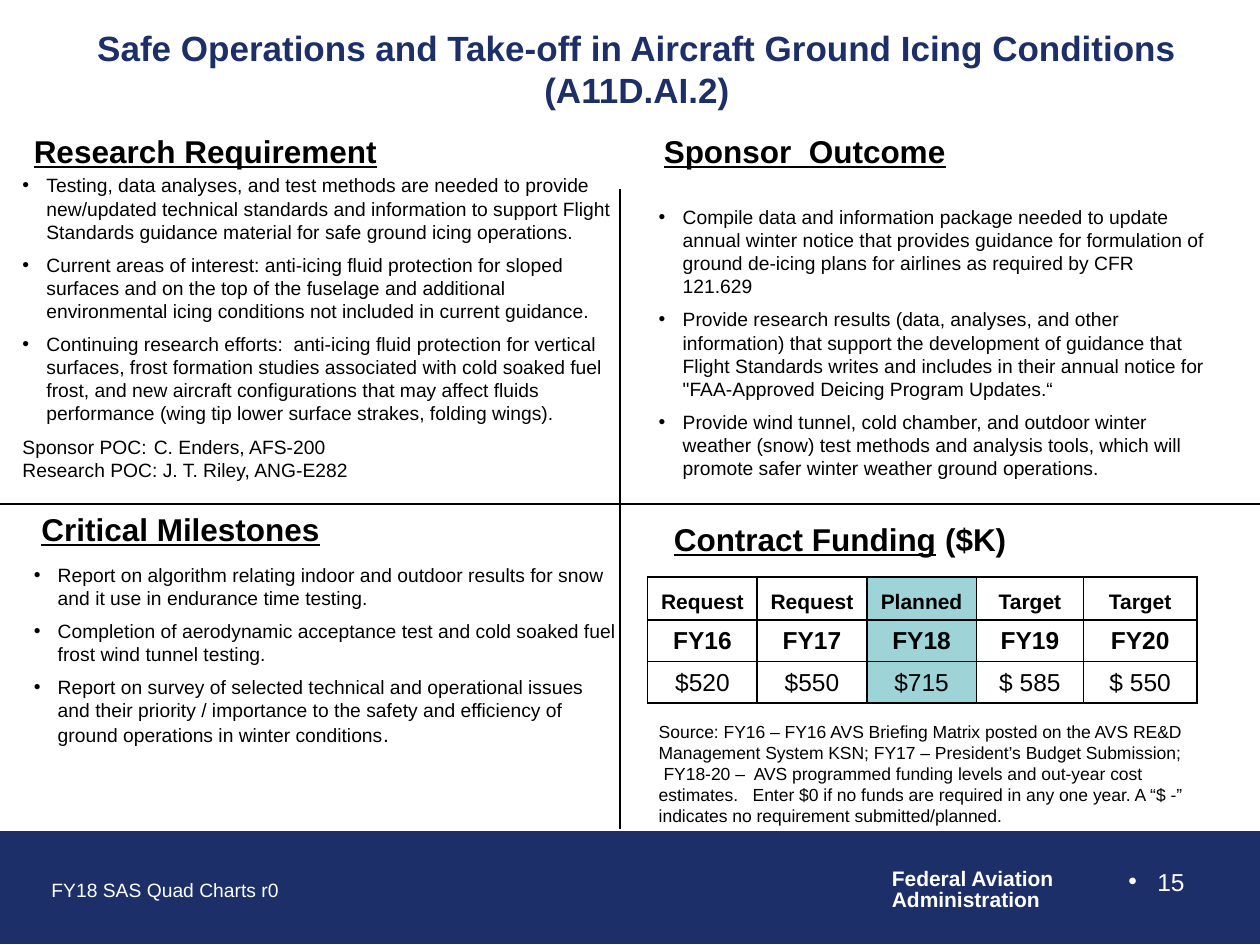
from dataclasses import dataclass

import pptx
import pptx.dml.color
import pptx.enum.shapes
import pptx.enum.text
import pptx.oxml.ns
import pptx.util
from lxml import etree

Inches, Pt = pptx.util.Inches, pptx.util.Pt
RGBColor = pptx.dml.color.RGBColor
Align = pptx.enum.text.PP_ALIGN
Anchor = pptx.enum.text.MSO_ANCHOR
qn = pptx.oxml.ns.qn

NAVY = RGBColor(0x1D, 0x2F, 0x68)
BLACK = RGBColor(0, 0, 0)
WHITE = RGBColor(0xFF, 0xFF, 0xFF)
TEAL = RGBColor(0x9E, 0xD3, 0xD7)
FONT = "Arial"


@dataclass
class Span:
    text: str
    size: float = 11
    bold: bool = False
    underline: bool = False
    color: RGBColor = BLACK


@dataclass
class Para:
    spans: list[Span]
    bullet_indent: float = 0
    space_before: float = 0
    line_spacing: float = 1
    align: Align = Align.LEFT


@dataclass
class TextBlock:
    left: float
    top: float
    width: float
    height: float
    paras: list[Para]
    wrap: bool = True
    anchor: Anchor = Anchor.TOP


def write_para(para, content: Para) -> None:
    para.alignment = content.align
    para.space_before = Pt(content.space_before)
    para.line_spacing = content.line_spacing
    if content.bullet_indent:
        properties = para._p.get_or_add_pPr()
        indent = Inches(content.bullet_indent)
        properties.set("marL", str(indent))
        properties.set("indent", str(-indent))
        etree.SubElement(properties, qn("a:buFont"), typeface=FONT)
        etree.SubElement(properties, qn("a:buChar"), char="•")
    for span in content.spans:
        run = para.add_run()
        run.text = span.text
        run.font.name = FONT
        run.font.size = Pt(span.size)
        run.font.bold = span.bold
        run.font.underline = span.underline
        run.font.color.rgb = span.color


def draw_text(page, block: TextBlock) -> None:
    box = page.shapes.add_textbox(Inches(block.left), Inches(block.top),
                                  Inches(block.width), Inches(block.height))
    frame = box.text_frame
    frame.word_wrap = block.wrap
    frame.vertical_anchor = block.anchor
    for index, content in enumerate(block.paras):
        para = frame.add_paragraph() if index else frame.paragraphs[0]
        write_para(para, content)


def draw_line(page, x1: float, y1: float, x2: float, y2: float) -> None:
    line = page.shapes.add_connector(pptx.enum.shapes.MSO_CONNECTOR.STRAIGHT,
                                     Inches(x1), Inches(y1), Inches(x2), Inches(y2))
    line.line.color.rgb = BLACK
    line.line.width = Pt(0.75)
    etree.SubElement(line._element.spPr, qn("a:effectLst"))


def border_cell(cell) -> None:
    properties = cell._tc.get_or_add_tcPr()
    for position, side in enumerate(("lnL", "lnR", "lnT", "lnB")):
        edge = etree.Element(qn(f"a:{side}"), w=str(Pt(1)))
        fill = etree.SubElement(edge, qn("a:solidFill"))
        etree.SubElement(fill, qn("a:srgbClr"), val=str(BLACK))
        properties.insert(position, edge)


def draw_funding_table(page) -> None:
    widths = [0.87, 0.87, 0.87, 0.85, 0.9]
    heights = [0.34, 0.33, 0.33]
    rows = [["Request", "Request", "Planned", "Target", "Target"],
            ["FY16", "FY17", "FY18", "FY19", "FY20"],
            ["$520", "$550", "$715", "$ 585", "$ 550"]]
    fills = {2: TEAL, 4: WHITE}
    table = page.shapes.add_table(len(rows), len(widths), Inches(5.14), Inches(4.58),
                                  Inches(sum(widths)), Inches(sum(heights))).table
    table.first_row = table.horz_banding = False
    for column, width in zip(table.columns, widths):
        column.width = Inches(width)
    for row, height in zip(table.rows, heights):
        row.height = Inches(height)
    for r, texts in enumerate(rows):
        for c, text in enumerate(texts):
            cell = table.cell(r, c)
            cell.vertical_anchor = Anchor.BOTTOM
            if c in fills:
                cell.fill.solid()
                cell.fill.fore_color.rgb = fills[c]
            else:
                cell.fill.background()
            border_cell(cell)
            span = Span(text, 12 if r == 0 else 14, bold=r < 2)
            write_para(cell.text_frame.paragraphs[0], Para([span], align=Align.CENTER))


def heading(left: float, top: float, text: str, suffix: str = "") -> TextBlock:
    spans = [Span(text, 18, True, True)]
    if suffix:
        spans.append(Span(suffix, 18, True))
    return TextBlock(left, top, 4.5, 0.38, [Para(spans)])


def bullets(texts: list[str]) -> list[Para]:
    return [Para([Span(text)], 0.19, 5.7 if index else 0) for index, text in enumerate(texts)]


REQUIREMENTS = bullets([
    "Testing, data analyses, and test methods are needed to provide new/updated technical "
    "standards and information to support Flight Standards guidance material for safe ground "
    "icing operations.",
    "Current areas of interest: anti-icing fluid protection for sloped surfaces and on the top "
    "of the fuselage and additional environmental icing conditions not included in current "
    "guidance.",
    "Continuing research efforts:  anti-icing fluid protection for vertical surfaces, frost "
    "formation studies associated with cold soaked fuel frost, and new aircraft configurations "
    "that may affect fluids performance (wing tip lower surface strakes, folding wings).",
]) + [
    Para([Span("Sponsor POC:\t C. Enders, AFS-200")], space_before=5.7),
    Para([Span("Research POC: J. T. Riley, ANG-E282")]),
]
OUTCOMES = bullets([
    "Compile data and information package needed to update annual winter notice that provides "
    "guidance for formulation of ground de-icing plans for airlines as required by CFR 121.629",
    "Provide research results (data, analyses, and other information) that support the "
    "development of guidance that Flight Standards writes and includes in their annual notice "
    "for \"FAA-Approved Deicing Program Updates.“",
    "Provide wind tunnel, cold chamber, and outdoor winter weather (snow) test methods and "
    "analysis tools, which will promote safer winter weather ground operations.",
])
MILESTONES = bullets([
    "Report on algorithm relating indoor and outdoor results for snow and it use in endurance "
    "time testing.",
    "Completion of aerodynamic acceptance test and cold soaked fuel frost wind tunnel testing.",
    "Report on survey of selected technical and operational issues and their priority / "
    "importance to the safety and efficiency of ground operations in winter conditions",
])
MILESTONES[-1].spans.append(Span(".", 12))
SOURCE_NOTE = (
    "Source: FY16 – FY16 AVS Briefing Matrix posted on the AVS RE&D Management System KSN; "
    "FY17 – President’s Budget Submission;  FY18-20 –  AVS programmed funding levels and "
    "out-year cost estimates.   Enter $0 if no funds are required in any one year. A “$ -” "
    "indicates no requirement submitted/planned.")
TITLE = "Safe Operations and Take-off in Aircraft Ground Icing Conditions (A11D.AI.2)"
AGENCY = [Para([Span(text, 12, True, color=WHITE)], line_spacing=0.85)
          for text in ("Federal Aviation", "Administration")]

TEXT_BLOCKS = [
    # Title
    TextBlock(0.42, 0.13, 9.27, 0.83,
              [Para([Span(TITLE, 20, True, color=NAVY)], align=Align.CENTER)],
              anchor=Anchor.MIDDLE),
    # Quadrants
    heading(0.17, 1, "Research Requirement"),
    TextBlock(0.08, 1.33, 4.92, 2.6, REQUIREMENTS),
    heading(5.17, 1, "Sponsor  Outcome"),
    TextBlock(5.13, 1.58, 4.53, 2.34, OUTCOMES),
    heading(0.23, 4, "Critical Milestones"),
    TextBlock(0.17, 4.42, 4.83, 1.6, MILESTONES),
    heading(5.25, 4.08, "Contract Funding", " ($K)"),
    TextBlock(5.13, 5.67, 4.37, 1.19, [Para([Span(SOURCE_NOTE, 10)])]),
    # Footer
    TextBlock(0.31, 6.92, 2.02, 0.29,
              [Para([Span("FY18 SAS Quad Charts r0", color=WHITE)])], wrap=False),
    TextBlock(6.98, 6.85, 1.5, 0.44, AGENCY, wrap=False),
    TextBlock(7.17, 6.83, 2.33, 0.52,
              [Para([Span("15", 14, color=WHITE)], 0.23, align=Align.RIGHT)]),
]


def main() -> None:
    deck = pptx.Presentation()
    deck.slide_width, deck.slide_height = Inches(10), Inches(7.5)
    page = deck.slides.add_slide(deck.slide_layouts[6])

    # Footer band
    band = page.shapes.add_shape(pptx.enum.shapes.MSO_SHAPE.RECTANGLE,
                                 Inches(0), Inches(6.6), Inches(10), Inches(0.89))
    band.shadow.inherit = False
    band.fill.solid()
    band.fill.fore_color.rgb = NAVY
    band.line.color.rgb = NAVY
    band.line.width = Pt(0.75)

    # Quadrant dividers
    draw_line(page, 4.92, 1.5, 4.92, 6.58)
    draw_line(page, 0, 4, 10, 4)

    draw_funding_table(page)
    for block in TEXT_BLOCKS:
        draw_text(page, block)
    deck.save("out.pptx")


if __name__ == "__main__":
    main()
